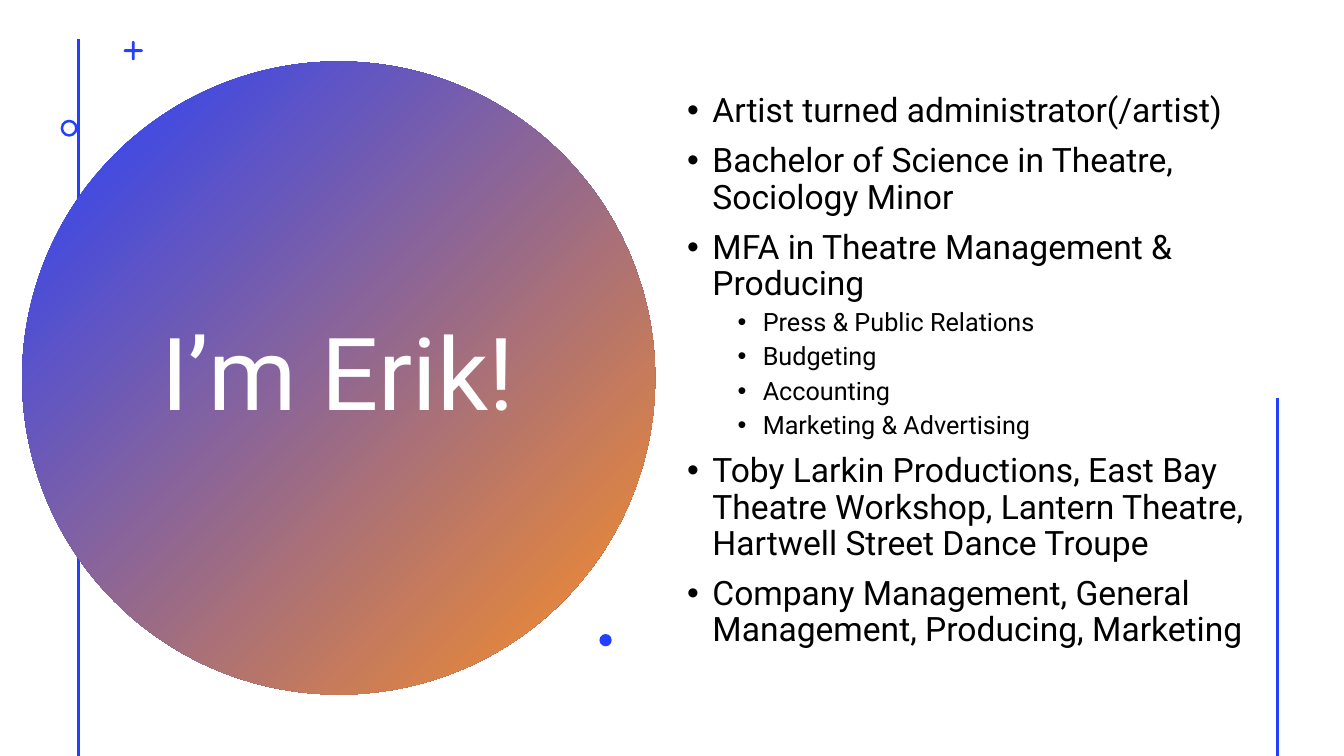
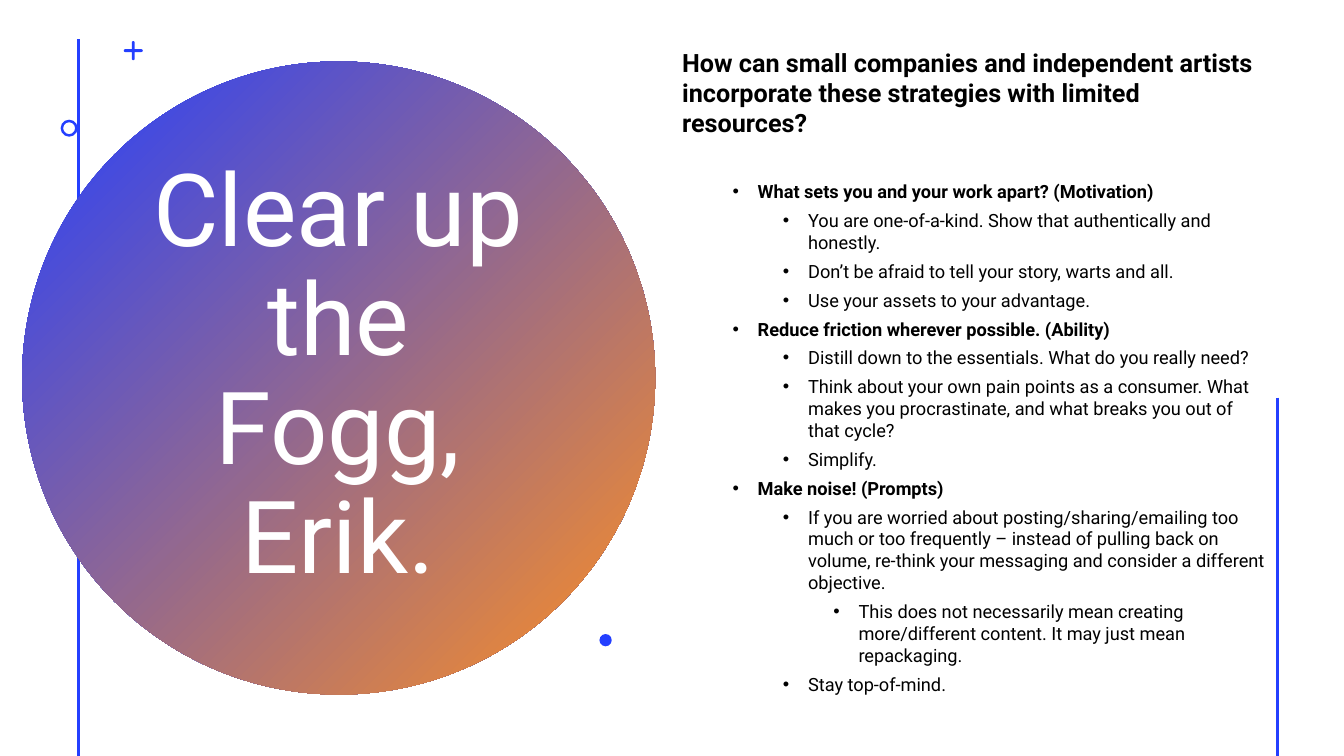
from math import cos, radians, sin, sqrt

from lxml import etree
from pptx import Presentation
from pptx.dml.color import RGBColor
from pptx.enum.shapes import MSO_CONNECTOR, MSO_SHAPE
from pptx.enum.text import MSO_ANCHOR, PP_ALIGN
from pptx.oxml.ns import qn
from pptx.util import Pt

STRAIGHT = MSO_CONNECTOR.STRAIGHT
OVAL, DONUT = MSO_SHAPE.OVAL, MSO_SHAPE.DONUT
TOP, MIDDLE = MSO_ANCHOR.TOP, MSO_ANCHOR.MIDDLE
LEFT, CENTER = PP_ALIGN.LEFT, PP_ALIGN.CENTER

COLORS = {"blue": "243FFF", "orange": "FF9022", "text": "000000", "white": "FFFFFF"}
FONT = "Roboto"
BULLET_HANG = 18
LEVEL_STEP = 36

# Each entry: (level, text)
ABOUT = [
    (0, "Artist turned administrator(/artist)"),
    (0, "Bachelor of Science in Theatre, Sociology Minor"),
    (0, "MFA in Theatre Management & Producing"),
    (1, "Press & Public Relations"),
    (1, "Budgeting"),
    (1, "Accounting"),
    (1, "Marketing & Advertising"),
    (0, "Toby Larkin Productions, East Bay Theatre Workshop, "
        "Lantern Theatre, Hartwell Street Dance Troupe"),
    (0, "Company Management, General Management, Producing, Marketing"),
]
QUESTION = ("How can small companies and independent artists incorporate "
            "these strategies with limited resources?")
STRATEGIES = [
    (1, "What sets you and your work apart? (Motivation)"),
    (2, "You are one-of-a-kind. Show that authentically and honestly."),
    (2, "Don’t be afraid to tell your story, warts and all."),
    (2, "Use your assets to your advantage."),
    (1, "Reduce friction wherever possible. (Ability)"),
    (2, "Distill down to the essentials. What do you really need?"),
    (2, "Think about your own pain points as a consumer. What makes you "
        "procrastinate, and what breaks you out of that cycle?"),
    (2, "Simplify."),
    (1, "Make noise! (Prompts)"),
    (2, "If you are worried about posting/sharing/emailing too much or too "
        "frequently – instead of pulling back on volume, re-think your "
        "messaging and consider a different objective."),
    (3, "This does not necessarily mean creating more/different content. "
        "It may just mean repackaging."),
    (2, "Stay top-of-mind."),
]


def rgb(name):
    return RGBColor.from_string(COLORS[name])


# Lines and shapes
def add_rule(s, x, top, bottom):
    line = s.shapes.add_connector(STRAIGHT, Pt(x), Pt(top), Pt(x), Pt(bottom))
    line.line.color.rgb = rgb("blue")
    line.line.width = Pt(2)
    etree.SubElement(line._element.spPr, qn("a:effectLst"))


def style_shape(sp, color="blue"):
    sp.shadow.inherit = False
    sp.line.fill.background()
    sp.fill.solid()
    sp.fill.fore_color.rgb = rgb(color)


def add_round(s, kind, x, y, size):
    sp = s.shapes.add_shape(kind, Pt(x), Pt(y), Pt(size), Pt(size))
    style_shape(sp)
    return sp


def add_gradient_disc(s, x, y, size):
    sp = add_round(s, OVAL, x, y, size)
    sp.fill.gradient()
    sp.fill.gradient_angle = 315
    for stop, color, position in zip(sp.fill.gradient_stops, ("blue", "orange"), (0, 1)):
        stop.color.rgb = rgb(color)
        stop.position = position


def add_plus(s, cx, cy, reach, half):
    """Plus sign with round arm ends; half is half the arm thickness."""
    points = []
    for arm in range(0, 360, 90):
        a = radians(arm)
        tip_x = cx + (reach - half) * cos(a)
        tip_y = cy + (reach - half) * sin(a)
        for turn in range(arm - 90, arm + 91, 30):
            t = radians(turn)
            points.append((Pt(tip_x + half * cos(t)), Pt(tip_y + half * sin(t))))
        corner = radians(arm + 45)
        points.append((Pt(cx + half * sqrt(2) * cos(corner)),
                       Pt(cy + half * sqrt(2) * sin(corner))))
    builder = s.shapes.build_freeform(*points[0])
    builder.add_line_segments(points[1:], close=True)
    style_shape(builder.convert_to_shape())


# Text
def add_text_box(s, x, y, w, h, anchor=TOP):
    tf = s.shapes.add_textbox(Pt(x), Pt(y), Pt(w), Pt(h)).text_frame
    tf.word_wrap = True
    tf.vertical_anchor = anchor
    return tf


def add_text(tf, text, size, color="text", bold=False, align=LEFT,
             spacing=1.0, before=0, level=None):
    """Add a paragraph; a level makes it a bullet."""
    first = tf.paragraphs[0]
    p = tf.add_paragraph() if first.runs else first
    p.alignment = align
    p.line_spacing = spacing
    p.space_before = Pt(before)
    if level is not None:
        p.level = level
        pPr = p._p.get_or_add_pPr()
        pPr.set("marL", str(Pt(BULLET_HANG + LEVEL_STEP * level)))
        pPr.set("indent", str(-Pt(BULLET_HANG)))
        etree.SubElement(pPr, qn("a:buFont")).set("typeface", "Arial")
        etree.SubElement(pPr, qn("a:buChar")).set("char", "•")
    r = p.add_run()
    r.text = text
    r.font.name = FONT
    r.font.size = Pt(size)
    r.font.bold = bold
    r.font.color.rgb = rgb(color)


# Shared slide design
def add_titled_slide(prs, title):
    s = prs.slides.add_slide(prs.slide_layouts[6])
    add_rule(s, 56.2, 28, 540)
    add_gradient_disc(s, 15.8, 43.9, 452.2)
    tf = add_text_box(s, 97.9, 101.5, 287.3, 336.2, anchor=MIDDLE)
    add_text(tf, title, 72, color="white", align=CENTER, spacing=0.9)
    add_plus(s, 95.2, 36.2, reach=6.8, half=1)
    ring = add_round(s, DONUT, 43.3, 85.5, 12.2)
    ring.adjustments[0] = 0.15
    add_round(s, OVAL, 428.2, 452.9, 8.8)
    add_rule(s, 912.3, 284, 540)
    return s


# Slides
def add_about_slide(prs):
    s = add_titled_slide(prs, "I’m Erik!")
    tf = add_text_box(s, 483.8, 30.2, 433.4, 470.2, anchor=MIDDLE)
    for level, text in ABOUT:
        size, before = (18, 5) if level else (24, 10)
        add_text(tf, text, size, spacing=0.9, before=before, level=level)


def add_strategy_slide(prs):
    s = add_titled_slide(prs, "Clear up the Fogg, Erik.")
    tf = add_text_box(s, 480.2, 30.2, 432, 509)
    add_text(tf, QUESTION, 18, bold=True, before=10)
    for i, (level, text) in enumerate(STRATEGIES):
        add_text(tf, text, 13, bold=level == 1, before=5 if i else 30.5, level=level)


def main():
    prs = Presentation()
    prs.slide_width, prs.slide_height = Pt(960), Pt(540)
    add_about_slide(prs)
    add_strategy_slide(prs)
    prs.save("out.pptx")


if __name__ == "__main__":
    main()
